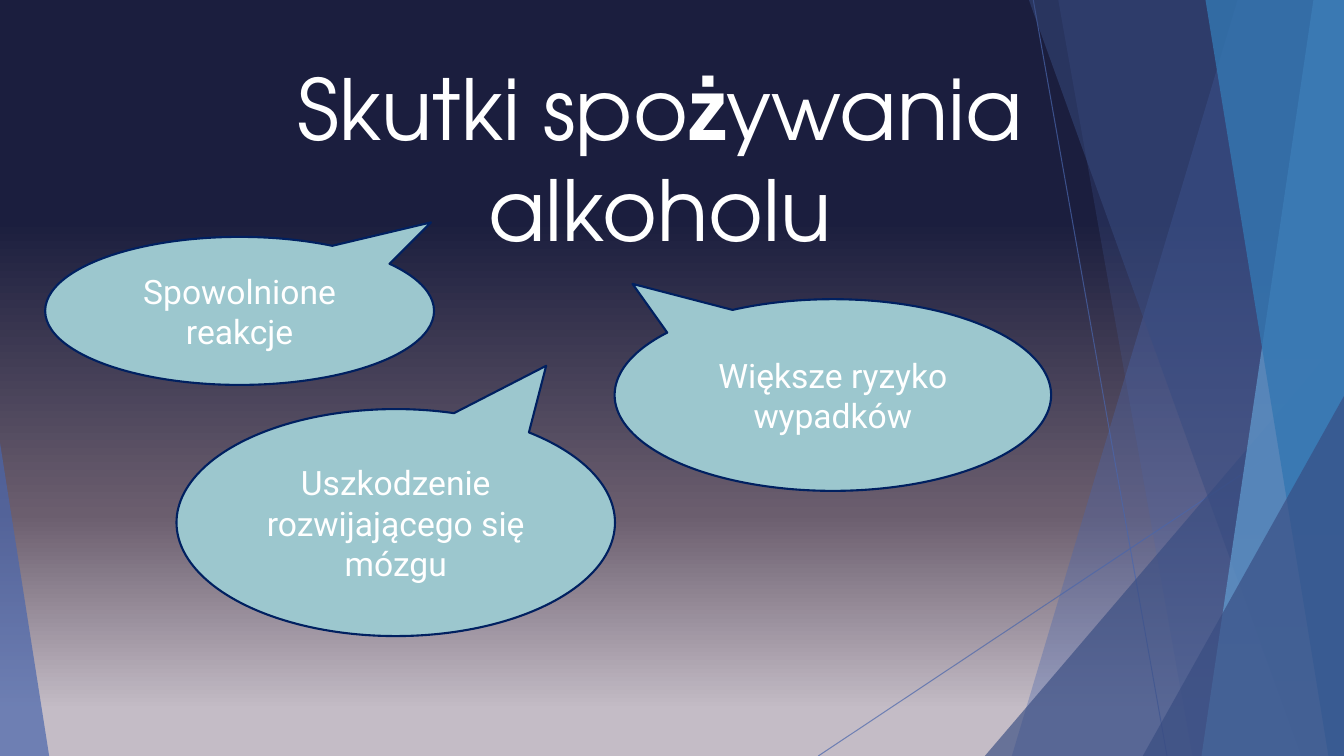
import copy
from dataclasses import dataclass

import pptx
import pptx.dml.color
import pptx.dml.fill
import pptx.enum.shapes
import pptx.enum.text
import pptx.oxml
import pptx.oxml.ns
import pptx.shapes.base
import pptx.slide
import pptx.text.text
import pptx.util
from lxml import etree

Cm = pptx.util.Cm
SLIDE_WIDTH = 33.87
SLIDE_HEIGHT = 19.05


@dataclass(frozen=True)
class Theme:
    backdrop: tuple = ((0.06, "C4BCC6"), (0.32, "6B5E6E"), (0.71, "1B1E3E"))
    indigo: str = "4A66AC"
    navy: str = "384C81"
    sky: str = "629DD1"
    azure: str = "3477B2"
    bubble: str = "9CC7CE"
    bubble_outline: str = "002060"
    text: str = "FFFFFF"
    title_font: str = "TeX Gyre Adventor"
    body_font: str = "Roboto"
    title_size: int = 60
    body_size: int = 24
    ray_width: float = 0.75
    outline_width: float = 1.5


THEME = Theme()


@dataclass(frozen=True)
class Ray:
    start: tuple[float, float]
    end: tuple[float, float]


@dataclass(frozen=True)
class Band:
    top_x: float
    bottom_x: float
    color: str
    opacity: int


@dataclass(frozen=True)
class Corner:
    left: float
    top: float
    right: float
    apex: float
    color: str
    opacity: int


@dataclass(frozen=True)
class Callout:
    text: str
    left: float
    top: float
    width: float
    height: float
    tip: tuple[float, float]


RAYS = (
    Ray((26.04, 0), (29.41, SLIDE_HEIGHT)),
    Ray((SLIDE_WIDTH, 10.24), (20.62, SLIDE_HEIGHT)),
)
FACETS = (
    Band(31.19, 25.5, THEME.indigo, 36),
    Band(26.67, 30.05, THEME.indigo, 20),
    Corner(24.82, 8.46, SLIDE_WIDTH, 1, THEME.navy, 66),
    Band(25.93, 32.79, THEME.navy, 50),
    Band(33.1, 30.28, THEME.sky, 70),
    Band(30.38, 33.48, THEME.azure, 80),
    Corner(28.8, 9.98, SLIDE_WIDTH, 1, THEME.navy, 66),
    Corner(0, 11.15, 1.24, 0, THEME.indigo, 70),
)
TITLE_RUNS = (("Skutki spo", False), ("ż", True), ("ywania alkoholu", False))
CALLOUTS = (
    Callout("Spowolnione reakcje", 1.14, 5.97, 9.8, 3.73, (0.492, -0.598)),
    Callout("Większe ryzyko wypadków", 15.49, 7.54, 11, 4.83, (-0.459, -0.58)),
    Callout("Uszkodzenie rozwijającego się mózgu", 4.45, 10.31, 11.05, 5.72, (0.343, -0.691)),
)


def paint(fill: pptx.dml.fill.FillFormat, color: str) -> None:
    fill.solid()
    fill.fore_color.rgb = pptx.dml.color.RGBColor.from_string(color)


def set_opacity(shape: pptx.shapes.base.BaseShape, percent: int) -> None:
    color = next(shape.element.spPr.iter(pptx.oxml.ns.qn("a:srgbClr")))
    alpha = etree.SubElement(color, pptx.oxml.ns.qn("a:alpha"))
    alpha.set("val", str(percent * 1000))


def format_run(run: pptx.text.text._Run, font: str, size: int) -> None:
    run.font.name = font
    run.font.size = pptx.util.Pt(size)
    run.font.color.rgb = pptx.dml.color.RGBColor.from_string(THEME.text)


def draw_background(slide: pptx.slide.Slide) -> None:
    fill = slide.background.fill
    fill.gradient()
    fill.gradient_angle = 90
    first_stop = next(slide.element.iter(pptx.oxml.ns.qn("a:gs")))
    first_stop.addnext(copy.deepcopy(first_stop))
    for stop, (position, color) in zip(fill.gradient_stops, THEME.backdrop):
        stop.position = position
        stop.color.rgb = pptx.dml.color.RGBColor.from_string(color)


def draw_ray(slide: pptx.slide.Slide, ray: Ray) -> None:
    connector = slide.shapes.add_connector(
        pptx.enum.shapes.MSO_CONNECTOR.STRAIGHT, *map(Cm, ray.start + ray.end)
    )
    paint(connector.line.fill, THEME.indigo)
    connector.line.width = pptx.util.Pt(THEME.ray_width)
    set_opacity(connector, 70)
    etree.SubElement(connector.element.spPr, pptx.oxml.ns.qn("a:effectLst"))


def draw_facet(slide: pptx.slide.Slide, facet: Band | Corner) -> None:
    if isinstance(facet, Band):
        builder = slide.shapes.build_freeform(Cm(facet.top_x), 0)
        builder.add_line_segments(
            [
                (Cm(SLIDE_WIDTH), 0),
                (Cm(SLIDE_WIDTH), Cm(SLIDE_HEIGHT)),
                (Cm(facet.bottom_x), Cm(SLIDE_HEIGHT)),
            ]
        )
        shape = builder.convert_to_shape()
    else:
        shape = slide.shapes.add_shape(
            pptx.enum.shapes.MSO_SHAPE.ISOSCELES_TRIANGLE,
            Cm(facet.left),
            Cm(facet.top),
            Cm(facet.right - facet.left),
            Cm(SLIDE_HEIGHT - facet.top),
        )
        shape.adjustments[0] = facet.apex
    shape.shadow.inherit = False
    paint(shape.fill, facet.color)
    set_opacity(shape, facet.opacity)
    shape.line.fill.background()


def draw_title(slide: pptx.slide.Slide) -> None:
    shape = slide.shapes.add_textbox(Cm(6.78), Cm(1.3), Cm(19.71), Cm(5.38))
    shape.text_frame.word_wrap = True
    paragraph = shape.text_frame.paragraphs[0]
    paragraph.alignment = pptx.enum.text.PP_ALIGN.CENTER
    for text, bold in TITLE_RUNS:
        run = paragraph.add_run()
        run.text = text
        run.font.bold = bold
        format_run(run, THEME.title_font, THEME.title_size)


def draw_callout(slide: pptx.slide.Slide, callout: Callout) -> None:
    shape = slide.shapes.add_shape(
        pptx.enum.shapes.MSO_SHAPE.OVAL_CALLOUT,
        Cm(callout.left),
        Cm(callout.top),
        Cm(callout.width),
        Cm(callout.height),
    )
    shape.adjustments[0], shape.adjustments[1] = callout.tip
    shape.shadow.inherit = False
    paint(shape.fill, THEME.bubble)
    paint(shape.line.fill, THEME.bubble_outline)
    shape.line.width = pptx.util.Pt(THEME.outline_width)
    shape.text_frame.text = callout.text
    shape.text_frame.word_wrap = True
    shape.text_frame.vertical_anchor = pptx.enum.text.MSO_ANCHOR.MIDDLE
    paragraph = shape.text_frame.paragraphs[0]
    paragraph.alignment = pptx.enum.text.PP_ALIGN.CENTER
    format_run(paragraph.runs[0], THEME.body_font, THEME.body_size)


def main() -> None:
    presentation = pptx.Presentation()
    presentation.slide_width = Cm(SLIDE_WIDTH)
    presentation.slide_height = Cm(SLIDE_HEIGHT)
    slide = presentation.slides.add_slide(presentation.slide_layouts[6])
    draw_background(slide)
    for ray in RAYS:
        draw_ray(slide, ray)
    for facet in FACETS:
        draw_facet(slide, facet)
    draw_title(slide)
    for callout in CALLOUTS:
        draw_callout(slide, callout)
    presentation.save("out.pptx")


if __name__ == "__main__":
    main()
